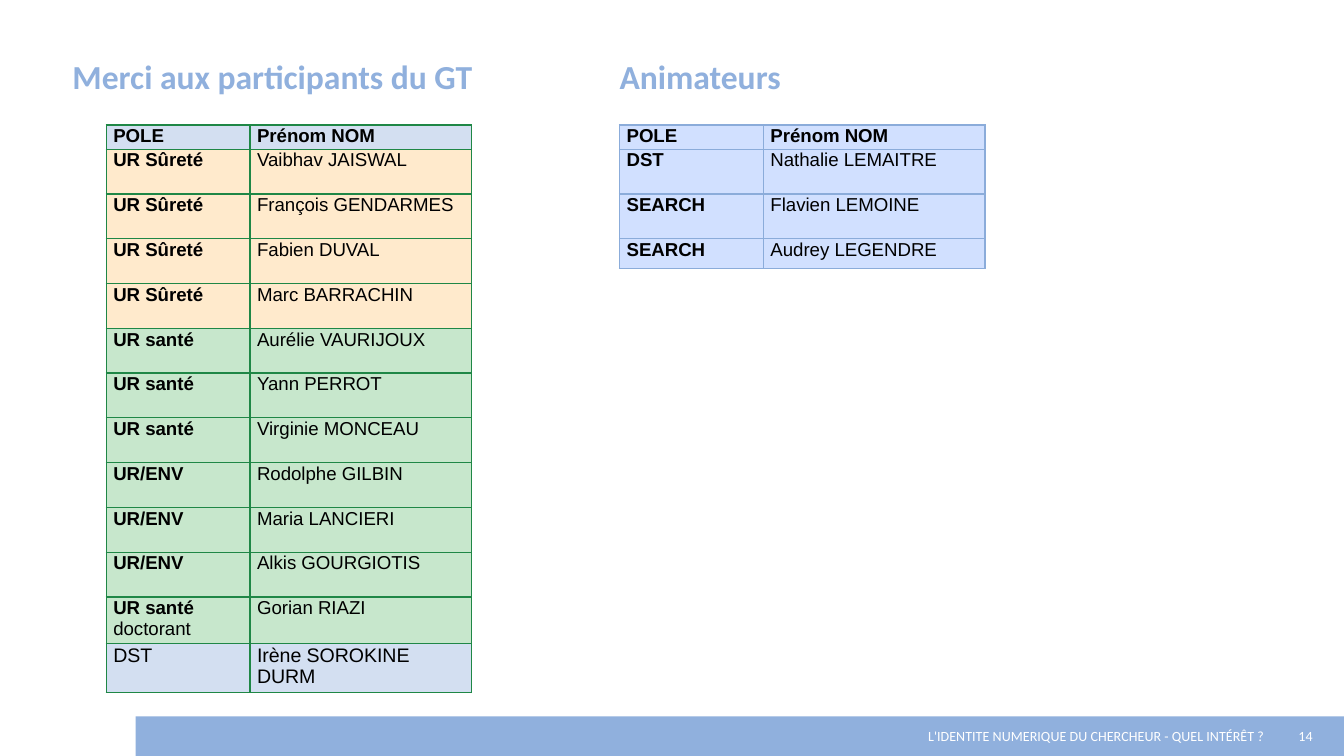
"""Build the acknowledgements slide: working-group participants and facilitators."""
from lxml import etree
from pptx import Presentation, util as u
from pptx.dml.color import RGBColor
from pptx.enum import shapes, text
from pptx.oxml.ns import qn

COLORS = {
    "band": "90B0DD", "white": "FFFFFF", "ink": "000000",
    "header": "D3DFF1", "safety": "FFEACC", "health": "C7E7CC", "host": "D1E0FF",
    "green_rule": "1F8746", "blue_rule": "8BACDA",
}
W = 10
H = W * 9 / 16
HEADER_H, ROW_H, LAST_H = 0.18, 1 / 3, 0.35
COLUMNS = (1.07, 1.65)
TABLE_TOP = 0.93

HEADER = ("POLE", "Prénom NOM")
PARTICIPANTS = [
    ("safety", "UR Sûreté", ["Vaibhav JAISWAL", "François GENDARMES",
                             "Fabien DUVAL", "Marc BARRACHIN"]),
    ("health", "UR santé", ["Aurélie VAURIJOUX", "Yann PERROT", "Virginie MONCEAU"]),
    ("health", "UR/ENV", ["Rodolphe GILBIN", "Maria LANCIERI", "Alkis GOURGIOTIS"]),
    ("health", "UR santé\ndoctorant", ["Gorian RIAZI"]),
    ("header", "DST", ["Irène SOROKINE DURM"]),
]
HOSTS = [
    ("host", "DST", ["Nathalie LEMAITRE"]),
    ("host", "SEARCH", ["Flavien LEMOINE", "Audrey LEGENDRE"]),
]
GROUPS = [
    {"title": "Merci aux participants du GT", "title_x": 0.46, "title_w": 4.07,
     "x": 0.79, "teams": PARTICIPANTS, "header": "header", "rule": "green_rule",
     "last_h": LAST_H, "last_size": 10.5, "last_bold": False},
    {"title": "Animateurs", "title_x": 4.53, "title_w": W - 4.53,
     "x": 4.61, "teams": HOSTS, "header": "host", "rule": "blue_rule",
     "last_h": 0.22, "last_size": 10, "last_bold": True},
]
FOOTER_TOP = 5.33
FOOTER_H = H - FOOTER_TOP
FOOTER = [
    ("L'IDENTITE NUMERIQUE DU CHERCHEUR - QUEL INTÉRÊT ? ", 2.77, 6.66, text.PP_ALIGN.RIGHT, 0),
    ("14", 9.43, 0.57, text.PP_ALIGN.CENTER, 0.1),
]


def rgb(name):
    return RGBColor.from_string(COLORS[name])


def write(paragraph, words, font, size, color, bold=False):
    run = paragraph.add_run()
    run.text = words
    run.font.name, run.font.size, run.font.bold = font, u.Pt(size), bold
    run.font.color.rgb = rgb(color)


def add_label(slide, words, box, size, color, bold, align, anchor, sides):
    frame = slide.shapes.add_textbox(*map(u.Inches, box)).text_frame
    frame.word_wrap = True
    frame.vertical_anchor = anchor
    frame.margin_left, frame.margin_right = map(u.Inches, sides)
    frame.paragraphs[0].alignment = align
    write(frame.paragraphs[0], words, "Calibri", size, color, bold)


def fill_cell(cell, lines, fill, rule, size, bold):
    cell.margin_left = cell.margin_right = u.Pt(3.8)
    cell.margin_top = cell.margin_bottom = u.Pt(0.5)
    props = cell._tc.get_or_add_tcPr()
    for side in ("lnL", "lnR", "lnT", "lnB"):
        border = etree.SubElement(props, qn(f"a:{side}"), w=str(u.Pt(0.75)))
        solid = etree.SubElement(border, qn("a:solidFill"))
        etree.SubElement(solid, qn("a:srgbClr"), val=COLORS[rule])
    cell.fill.solid()
    cell.fill.fore_color.rgb = rgb(fill)
    frame = cell.text_frame
    for i, line in enumerate(lines.split("\n")):
        paragraph = frame.add_paragraph() if i else frame.paragraphs[0]
        write(paragraph, line, "Arial", size, "ink", bold and i == 0)


def add_group(slide, group):
    add_label(slide, group["title"], (group["title_x"], 0.37, group["title_w"], 0.47),
              18, "band", True, text.PP_ALIGN.LEFT, text.MSO_ANCHOR.TOP, (0.08, 0.1))
    people = [(fill, team, name) for fill, team, names in group["teams"] for name in names]
    rows = [(group["header"], *HEADER)] + people
    heights = [HEADER_H] + [ROW_H] * (len(people) - 1) + [group["last_h"]]
    place = (group["x"], TABLE_TOP, sum(COLUMNS), sum(heights))
    table = slide.shapes.add_table(len(rows), len(COLUMNS), *map(u.Inches, place)).table
    table.first_row = table.horz_banding = False
    for column, width in zip(table.columns, COLUMNS):
        column.width = u.Inches(width)
    for r, ((fill, *cells), height) in enumerate(zip(rows, heights)):
        table.rows[r].height = u.Inches(height)
        last = r == len(people)
        size = group["last_size"] if last else 10
        for c, words in enumerate(cells):
            bold = r == 0 or (c == 0 and (group["last_bold"] or not last))
            fill_cell(table.cell(r, c), words, fill, group["rule"], size, bold)


def main():
    deck = Presentation()
    deck.slide_width, deck.slide_height = u.Inches(W), u.Inches(H)
    slide = deck.slides.add_slide(deck.slide_layouts[6])
    band = slide.shapes.add_shape(shapes.MSO_SHAPE.RECTANGLE, *map(
        u.Inches, (1.01, FOOTER_TOP, W - 1.01, FOOTER_H)))
    band.shadow.inherit = False
    band.fill.solid()
    band.fill.fore_color.rgb = rgb("band")
    band.line.fill.background()
    for words, x, width, align, side in FOOTER:
        add_label(slide, words, (x, FOOTER_TOP, width, FOOTER_H), 7.5, "white", False,
                  align, text.MSO_ANCHOR.MIDDLE, (side, side))
    for group in GROUPS:
        add_group(slide, group)
    deck.save("out.pptx")


if __name__ == "__main__":
    main()
